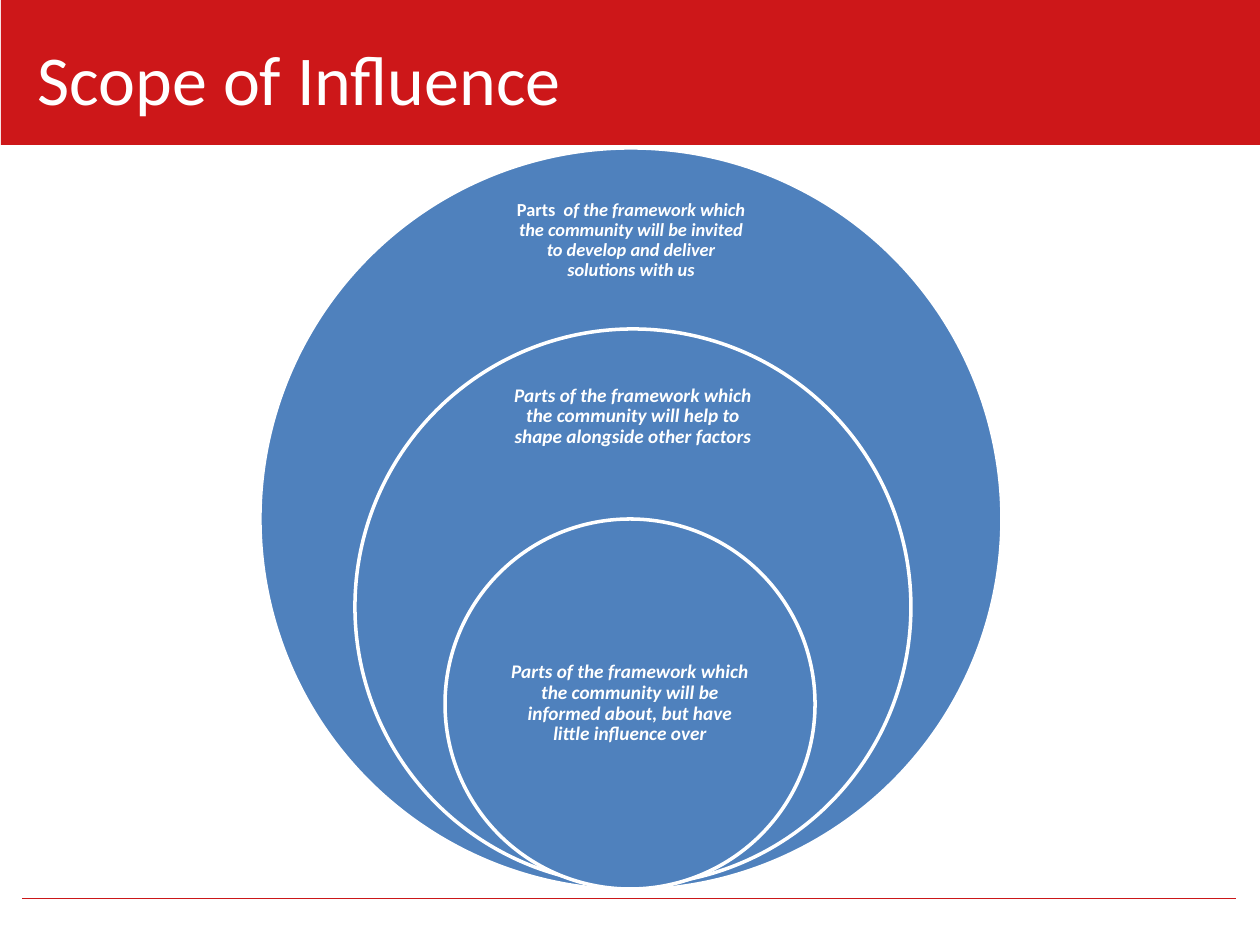
from lxml import etree
from pptx import Presentation
from pptx import util as u
from pptx.dml.color import RGBColor
from pptx.enum import shapes, text
from pptx.oxml.ns import qn

PX = 914400 / 126
RED, BLUE, WHITE = "CD1719", "4F81BD", "FFFFFF"

SCOPES = [
    ((260, 148, 742), (501, 185, 260, 111), 10.5,
     [("Parts ", False),
      (" of the framework which the community will be invited "
       "to develop and deliver solutions with us", True)]),
    ((355, 329, 556), (503, 364, 260, 105), 11,
     [("Parts of the framework which the community will help to "
       "shape alongside other factors", True)]),
    ((445, 519, 370), (499, 611, 262, 185), 11,
     [("Parts of the framework which the community will be "
       "informed about, but have little influence over", True)]),
]


def px(*lengths):
    return [round(length * PX) for length in lengths]


def colour(value):
    return RGBColor.from_string(value)


def style_font(font, size, bold=False, italic=False):
    font.name = "Calibri"
    font.size = u.Pt(size)
    font.bold = bold
    font.italic = italic
    font.color.rgb = colour(WHITE)


def add_filled(page, kind, place, fill, line=None):
    shape = page.shapes.add_shape(kind, *px(*place))
    shape.shadow.inherit = False
    shape.fill.solid()
    shape.fill.fore_color.rgb = colour(fill)
    if line:
        shape.line.color.rgb = colour(line)
        shape.line.width = u.Pt(2)
    else:
        shape.line.fill.background()


def add_rule(page, start, end):
    rule = page.shapes.add_connector(
        shapes.MSO_CONNECTOR.STRAIGHT, *px(*start, *end))
    rule.line.color.rgb = colour("CB1719")
    rule.line.width = u.Pt(0.25)
    etree.SubElement(rule.element.spPr, qn("a:effectLst"))


def place_title(page, wording):
    title = page.shapes.title
    title.element.getparent().append(title.element)
    title.left, title.top, title.width, title.height = px(25, 28, 1186, 100)
    title.text_frame.text = wording
    title.text_frame.vertical_anchor = text.MSO_ANCHOR.MIDDLE
    para = title.text_frame.paragraphs[0]
    para.alignment = text.PP_ALIGN.LEFT
    style_font(para.runs[0].font, 40)


def add_label(page, place, size, spans):
    frame = page.shapes.add_textbox(*px(*place)).text_frame
    frame.word_wrap = True
    frame.vertical_anchor = text.MSO_ANCHOR.MIDDLE
    inset, = px(11)
    frame.margin_left = frame.margin_right = inset
    frame.margin_top = frame.margin_bottom = inset
    para = frame.paragraphs[0]
    para.alignment = text.PP_ALIGN.CENTER
    para.line_spacing = 0.9
    for wording, italic in spans:
        span = para.add_run()
        span.text = wording
        style_font(span.font, size, bold=True, italic=italic)


def main():
    deck = Presentation()
    deck.slide_width, deck.slide_height = px(1260, 945)
    page = deck.slides.add_slide(deck.slide_layouts[5])
    add_rule(page, (22, 898), (1236, 898))
    add_filled(page, shapes.MSO_SHAPE.RECTANGLE, (1, 0, 1260, 145), RED)
    place_title(page, "Scope of Influence")
    for (left, top, size), label, points, spans in SCOPES:
        add_filled(page, shapes.MSO_SHAPE.OVAL,
                   (left, top, size, size), BLUE, WHITE)
        add_label(page, label, points, spans)
    deck.save("out.pptx")


if __name__ == "__main__":
    main()
